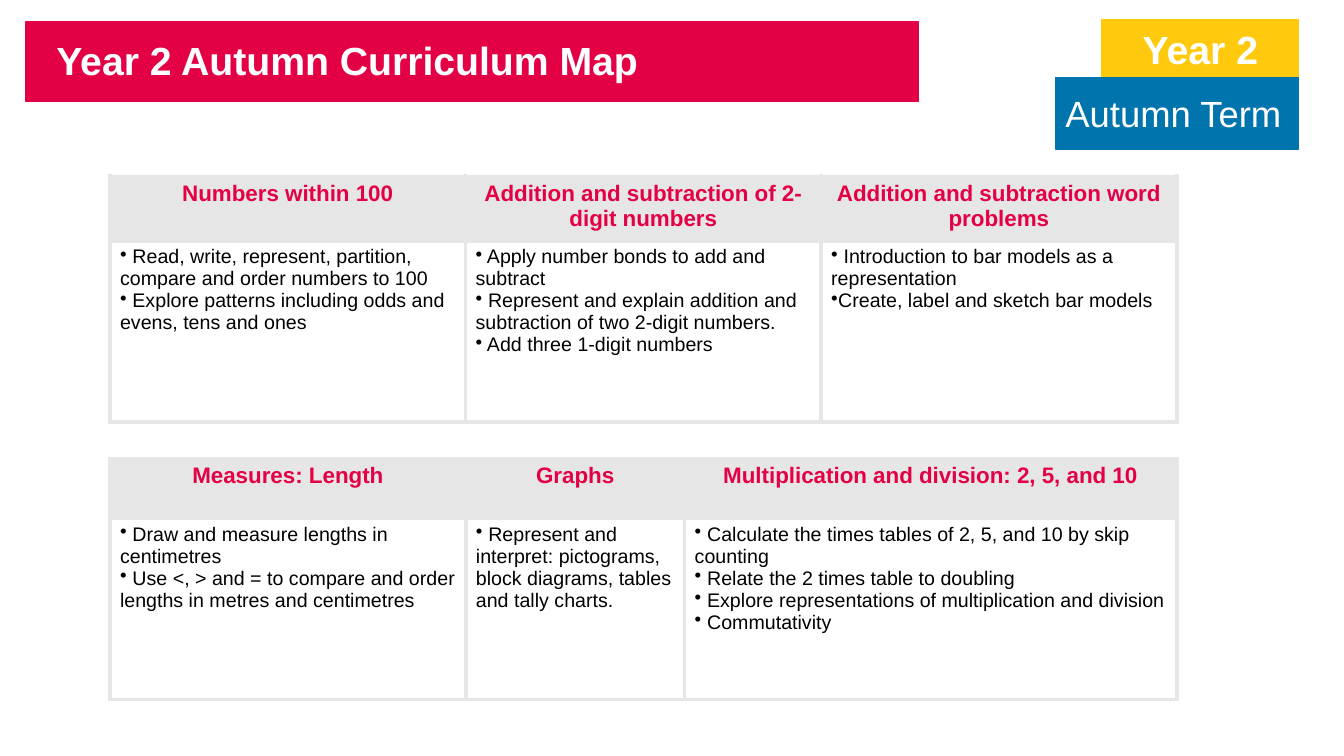
import pptx
import pptx.dml.color
import pptx.enum.shapes
import pptx.enum.text
import pptx.oxml
import pptx.oxml.ns
import pptx.util

ALIGN = pptx.enum.text.PP_ALIGN
ANCHOR = pptx.enum.text.MSO_ANCHOR
AUTO_SIZE = pptx.enum.text.MSO_AUTO_SIZE

RED, GREY, YELLOW, BLUE = "E40045", "E6E6E6", "FFC90D", "0074AC"
WHITE, BLACK = "FFFFFF", "000000"


def color(hex_string):
    return pptx.dml.color.RGBColor.from_string(hex_string)


def write(frame, *lines, size, ink, bold=False, align=ALIGN.LEFT,
          anchor=ANCHOR.TOP, bullet=None):
    """Write each line as one paragraph of the text frame."""
    frame.vertical_anchor = anchor
    for index, line in enumerate(lines):
        paragraph = frame.paragraphs[0] if index == 0 else frame.add_paragraph()
        paragraph.alignment = align
        run = paragraph.add_run()
        run.text = line
        run.font.name = "Arial"
        run.font.size = pptx.util.Pt(size)
        run.font.bold = bold
        run.font.color.rgb = color(ink)
        if bullet:
            properties = paragraph._p.get_or_add_pPr()
            properties.set("marL", "0")
            properties.set("indent", "0")
            properties.append(pptx.oxml.parse_xml(
                f'<a:buChar {pptx.oxml.ns.nsdecls("a")} char="{bullet}"/>'))


class CurriculumSlide:
    """Holds the slide and its style; lengths are percentages of the slide."""

    def __init__(self, presentation):
        self.width = presentation.slide_width
        self.height = presentation.slide_height
        self.slide = presentation.slides.add_slide(presentation.slide_layouts[6])
        self.heading = dict(size=16, ink=RED, bold=True, align=ALIGN.CENTER)
        self.body = dict(size=14, ink=BLACK, bullet="•")

    def across(self, share):
        return round(self.width * share / 100)

    def down(self, share):
        return round(self.height * share / 100)

    def place(self, left, top, width, height):
        return (self.across(left), self.down(top),
                self.across(width), self.down(height))

    def block(self, box, fill, text=None, **text_format):
        shape = self.slide.shapes.add_shape(
            pptx.enum.shapes.MSO_SHAPE.RECTANGLE, *self.place(*box))
        shape.shadow.inherit = False
        shape.fill.solid()
        shape.fill.fore_color.rgb = color(fill)
        shape.line.color.rgb = color(fill)
        shape.line.width = pptx.util.Pt(1)
        if text:
            shape.text_frame.word_wrap = True
            write(shape.text_frame, text, **text_format)

    def title(self, box, text, **text_format):
        frame = self.slide.shapes.add_textbox(*self.place(*box)).text_frame
        frame.word_wrap = False
        frame.auto_size = AUTO_SIZE.SHAPE_TO_FIT_TEXT
        write(frame, text, **text_format)

    def border(self, cell):
        properties = cell._tc.get_or_add_tcPr()
        for side in "LRTB":
            properties.append(pptx.oxml.parse_xml(
                f'<a:ln{side} {pptx.oxml.ns.nsdecls("a")} w="{int(pptx.util.Pt(3))}">'
                f'<a:solidFill><a:srgbClr val="{GREY}"/></a:solidFill></a:ln{side}>'))

    def topics(self, left, top, widths, heights, content):
        box = (left, top, sum(widths), sum(heights))
        table = self.slide.shapes.add_table(
            2, len(content), *self.place(*box)).table
        table.first_row = table.horz_banding = False
        for row, height in zip(table.rows, heights):
            row.height = self.down(height)
        for index, (heading, points) in enumerate(content.items()):
            table.columns[index].width = self.across(widths[index])
            head, body = table.cell(0, index), table.cell(1, index)
            for cell in (head, body):
                self.border(cell)
            head.fill.solid()
            head.fill.fore_color.rgb = color(GREY)
            body.fill.background()
            write(head.text_frame, heading, **self.heading)
            write(body.text_frame, *points, **self.body)


FIRST_HALF = {
    "Numbers within 100": [
        " Read, write, represent, partition, compare and order numbers to 100",
        " Explore patterns including odds and evens, tens and ones"],
    "Addition and subtraction of 2-digit numbers": [
        " Apply number bonds to add and subtract",
        " Represent and explain addition and subtraction of two 2-digit numbers.",
        " Add three 1-digit numbers"],
    "Addition and subtraction word problems": [
        " Introduction to bar models as a representation",
        "Create, label and sketch bar models"],
}
SECOND_HALF = {
    "Measures: Length": [
        " Draw and measure lengths in centimetres",
        " Use <, > and = to compare and order lengths in metres and centimetres"],
    "Graphs": [
        " Represent and interpret: pictograms, block diagrams, tables and tally charts."],
    "Multiplication and division: 2, 5, and 10": [
        " Calculate the times tables of 2, 5, and 10 by skip counting",
        " Relate the 2 times table to doubling",
        " Explore representations of multiplication and division",
        " Commutativity"],
}


def main():
    presentation = pptx.Presentation()
    presentation.slide_width = pptx.util.Inches(13.33)
    presentation.slide_height = pptx.util.Inches(7.5)
    page = CurriculumSlide(presentation)

    # Title banner
    page.block((1.95, 2.93, 66.39, 10.53), RED)
    page.title((3.45, 4.13, 45.31, 7.6), "Year 2 Autumn Curriculum Map",
               size=28, ink=WHITE, bold=True)

    # Topic tables
    page.topics(8.18, 23.33, [26.46] * 3, [8.53, 24], FIRST_HALF)
    page.topics(8.18, 60.67, [26.48, 16.28, 36.61], [7.87, 24], SECOND_HALF)

    # Year and term labels
    page.block((82, 2.67, 14.63, 7.6), YELLOW, "Year 2",
               size=28, ink=WHITE, bold=True, align=ALIGN.CENTER)
    page.block((78.54, 10.27, 18.08, 9.47), BLUE, "Autumn Term",
               size=26, ink=WHITE, anchor=ANCHOR.MIDDLE)

    presentation.save("out.pptx")


if __name__ == "__main__":
    main()
